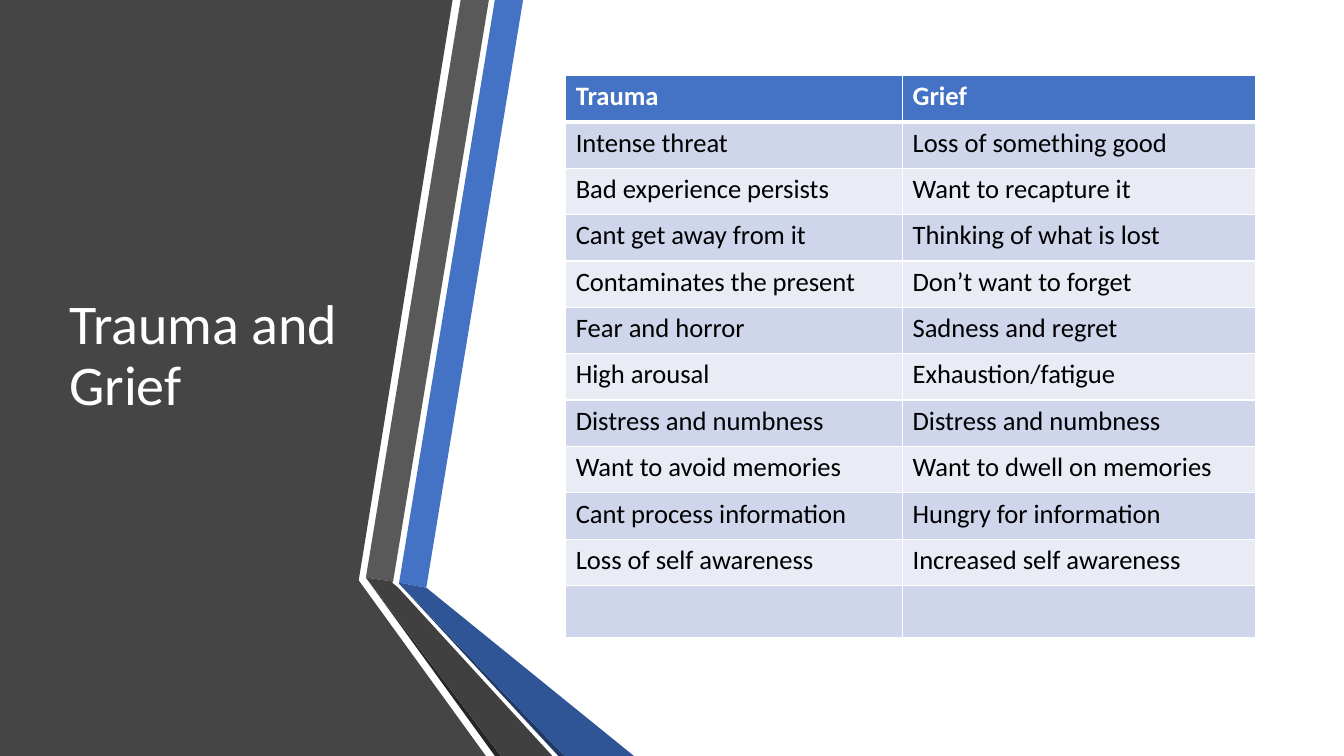
from dataclasses import dataclass

import lxml.etree
import pptx
import pptx.dml.color
import pptx.enum.text
import pptx.oxml.ns
import pptx.slide
import pptx.table
import pptx.text.text
import pptx.util

# Grid: 160 columns by 90 rows of square cells, 12 to the inch
GRID_COLUMNS, GRID_ROWS, CELLS_PER_INCH = 160, 90, 12

Point = tuple[float, float]


@dataclass(frozen=True)
class Theme:
    font: str = "Calibri"
    title_size: float = 40
    table_size: float = 19
    white: str = "FFFFFF"
    black: str = "000000"
    panel: str = "454545"
    blue: str = "4472C4"
    blue_dark: str = "2F5597"
    blue_deep: str = "203864"
    grey: str = "595959"
    grey_dark: str = "404040"
    grey_deep: str = "262626"
    band_odd: str = "CFD5EA"
    band_even: str = "E9EBF5"
    border: float = 1
    header_border: float = 3


@dataclass(frozen=True)
class Outline:
    color: str
    points: tuple[Point, ...]


@dataclass(frozen=True)
class TextStyle:
    size: float
    color: str
    bold: bool = False


THEME = Theme()

# Corners shared by the upper and lower parts of the folded ribbons
GREY_FOLD = (43.56, 68.76)
BLUE_FOLD = (47.52, 69.36)
BLUE_FOLD_LOW = (47.52, 69.48)
BLUE_FOLD_RIGHT = (50.76, 69.96)
GREY_FOOT = (59.64, GRID_ROWS)
BLUE_FOOT = (67.2, GRID_ROWS)

TITLE_PANEL = Outline(THEME.panel, (
    (0, 0), (53.88, 0), (42.72, 69), (42.72, 69.12), (57.84, GRID_ROWS), (0, GRID_ROWS)))
BLUE_RIBBON_TOP = Outline(THEME.blue, (
    BLUE_FOLD, BLUE_FOLD_RIGHT, (62.28, 0), (58.92, 0)))
GREY_RIBBON_TOP = Outline(THEME.grey, (
    (58.2, 0), (54.84, 0), GREY_FOLD, (46.8, 69.24)))
GREY_RIBBON_EDGE = Outline(THEME.grey_deep, (
    GREY_FOLD, (58.92, GRID_ROWS), GREY_FOOT))
BLUE_RIBBON_EDGE = Outline(THEME.blue_deep, (
    BLUE_FOLD_LOW, (66.48, GRID_ROWS), BLUE_FOOT))
BLUE_RIBBON_FOOT = Outline(THEME.blue_dark, (
    BLUE_FOLD_LOW, BLUE_FOOT, (75.48, GRID_ROWS), BLUE_FOLD_RIGHT, BLUE_FOLD))
GREY_RIBBON_FOOT = Outline(THEME.grey_dark, (
    (65.76, GRID_ROWS), (47.4, 69.96), (46.68, 69.36), (46.8, 69.24), GREY_FOLD, GREY_FOOT))
OUTLINES = (
    TITLE_PANEL, BLUE_RIBBON_TOP, GREY_RIBBON_TOP, GREY_RIBBON_EDGE,
    BLUE_RIBBON_EDGE, BLUE_RIBBON_FOOT, GREY_RIBBON_FOOT,
)

TABLE_ROWS = (
    ("Trauma", "Grief"),
    ("Intense threat", "Loss of something good"),
    ("Bad experience persists", "Want to recapture it"),
    ("Cant get away from it", "Thinking of what is lost"),
    ("Contaminates the present", "Don’t want to forget"),
    ("Fear and horror", "Sadness and regret"),
    ("High arousal", "Exhaustion/fatigue"),
    ("Distress and numbness", "Distress and numbness"),
    ("Want to avoid memories", "Want to dwell on memories"),
    ("Cant process information", "Hungry for information"),
    ("Loss of self awareness", "Increased self awareness"),
    ("", ""),
)
COLUMN_WIDTHS = (40.1, 42)
ROW_HEIGHT, LAST_ROW_HEIGHT = 5.52, 6.24


def grid(cells: float) -> pptx.util.Length:
    return pptx.util.Inches(cells / CELLS_PER_INCH)


def rgb(color: str) -> pptx.dml.color.RGBColor:
    return pptx.dml.color.RGBColor.from_string(color)


def add_run(paragraph: pptx.text.text._Paragraph, text: str, style: TextStyle) -> None:
    run = paragraph.add_run()
    run.text = text
    run.font.name = THEME.font
    run.font.size = pptx.util.Pt(style.size)
    run.font.bold = style.bold
    run.font.color.rgb = rgb(style.color)


def draw_outline(slide: pptx.slide.Slide, outline: Outline) -> None:
    corners = [(grid(x), grid(y)) for x, y in outline.points]
    builder = slide.shapes.build_freeform(*corners[0])
    builder.add_line_segments(corners[1:], close=True)
    shape = builder.convert_to_shape()
    shape.shadow.inherit = False
    shape.fill.solid()
    shape.fill.fore_color.rgb = rgb(outline.color)
    shape.line.fill.background()


def draw_title(slide: pptx.slide.Slide, text: str) -> None:
    shape = slide.shapes.add_textbox(grid(7.08), grid(9), grid(36.48), grid(67))
    frame = shape.text_frame
    frame.word_wrap = True
    frame.vertical_anchor = pptx.enum.text.MSO_ANCHOR.MIDDLE
    paragraph = frame.paragraphs[0]
    paragraph.line_spacing = 0.9
    add_run(paragraph, text, TextStyle(THEME.title_size, THEME.white))


def set_border(cell: pptx.table._Cell, side: str, width: float) -> None:
    qualified = pptx.oxml.ns.qn
    line = lxml.etree.SubElement(
        cell._tc.get_or_add_tcPr(), qualified(f"a:ln{side}"), w=str(pptx.util.Pt(width)))
    fill = lxml.etree.SubElement(line, qualified("a:solidFill"))
    lxml.etree.SubElement(fill, qualified("a:srgbClr"), val=THEME.white)


def fill_cell(cell: pptx.table._Cell, text: str, row: int) -> None:
    # Borders come before the fill in the cell's properties
    thick_side = {0: "B", 1: "T"}.get(row)
    for side in "LRTB":
        set_border(cell, side, THEME.header_border if side == thick_side else THEME.border)
    is_header = row == 0
    band = THEME.band_odd if row % 2 else THEME.band_even
    cell.fill.solid()
    cell.fill.fore_color.rgb = rgb(THEME.blue if is_header else band)
    if text:
        color = THEME.white if is_header else THEME.black
        add_run(cell.text_frame.paragraphs[0], text,
                TextStyle(THEME.table_size, color, is_header))


def draw_table(slide: pptx.slide.Slide) -> None:
    heights = [ROW_HEIGHT] * (len(TABLE_ROWS) - 1) + [LAST_ROW_HEIGHT]
    shape = slide.shapes.add_table(
        len(TABLE_ROWS), len(COLUMN_WIDTHS), grid(67.35), grid(9),
        grid(sum(COLUMN_WIDTHS)), grid(sum(heights)))
    table = shape.table
    for column, width in zip(table.columns, COLUMN_WIDTHS):
        column.width = grid(width)
    for row, (texts, height) in enumerate(zip(TABLE_ROWS, heights)):
        table.rows[row].height = grid(height)
        for column, text in enumerate(texts):
            fill_cell(table.cell(row, column), text, row)


def main() -> None:
    presentation = pptx.Presentation()
    presentation.slide_width = grid(GRID_COLUMNS)
    presentation.slide_height = grid(GRID_ROWS)
    slide = presentation.slides.add_slide(presentation.slide_layouts[6])

    # Panel and folded ribbons on the left
    for outline in OUTLINES:
        draw_outline(slide, outline)

    # Title and comparison table
    draw_title(slide, "Trauma and Grief")
    draw_table(slide)
    presentation.save("out.pptx")


if __name__ == "__main__":
    main()
